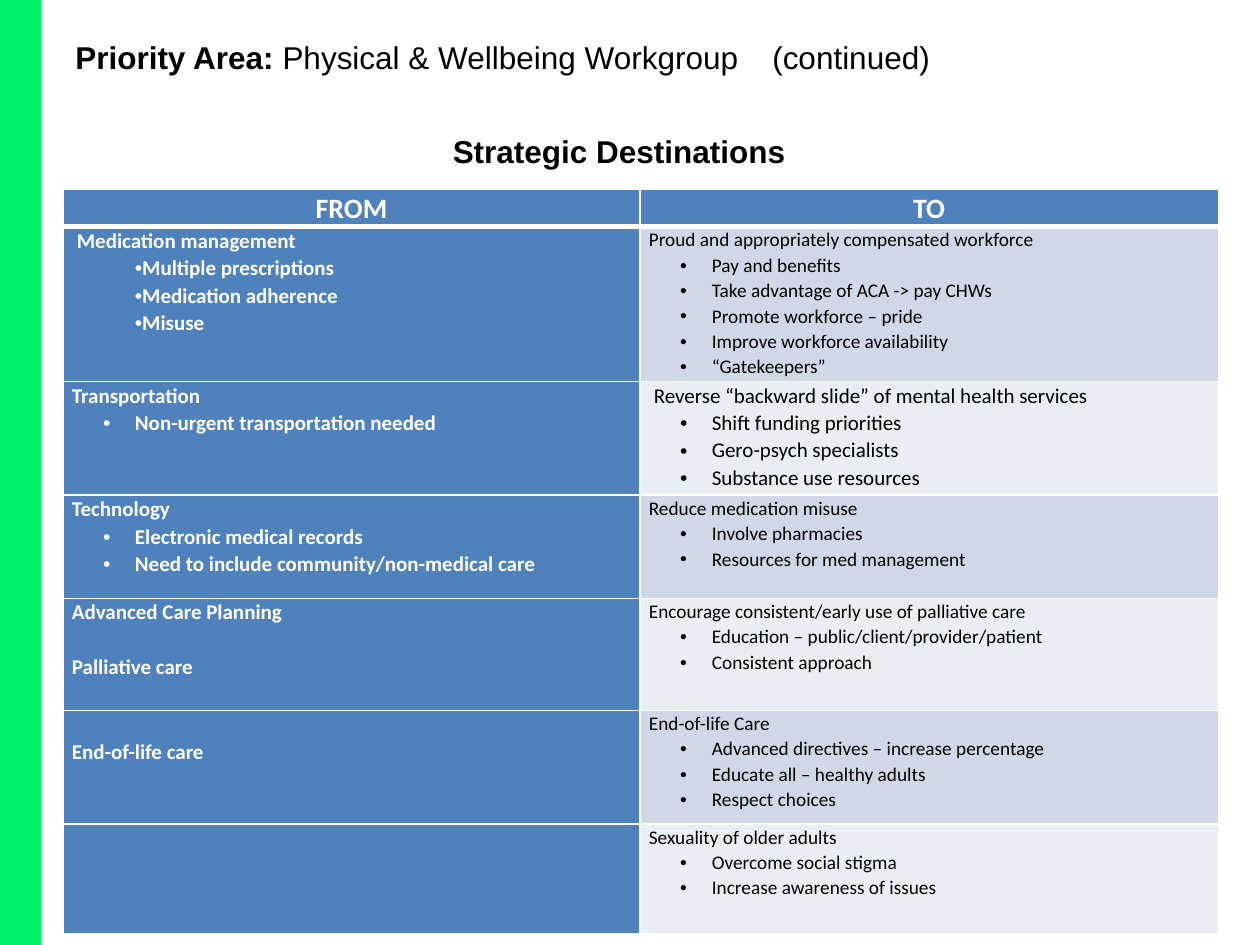
from dataclasses import dataclass

from lxml.etree import SubElement
from pptx import Presentation
from pptx.dml.color import RGBColor
from pptx.enum.shapes import MSO_SHAPE as Shape
from pptx.enum.text import MSO_ANCHOR as Anchor, PP_ALIGN as Align
from pptx.oxml.ns import qn
from pptx.util import Cm, Pt

COLORS = {
    "bar": "00F26D", "blue": "4F81BD", "band_dark": "D0D8E8",
    "band_light": "E9EDF4", "white": "FFFFFF", "black": "000000",
}
COL_WIDTHS = [11.63, 11.66]
ROW_HEIGHTS = [0.76, 3.12, 2.29, 2.08, 2.26, 2.29, 2.21]
BLANK_LINE = Pt(15.7)


@dataclass
class Entry:
    heading: str = ""
    bullets: tuple = ()
    size: int = 11
    hanging: float = 0.64   # bullet outdent, cm
    left: float = 0         # heading indent, cm
    second: str = ""        # another heading, one line further down
    top: int = 0            # cell top margin


ROWS = [
    (Entry("Medication management",
           ("Multiple prescriptions", "Medication adherence", "Misuse"),
           12, hanging=0, left=0.1),
     Entry("Proud and appropriately compensated workforce",
           ("Pay and benefits", "Take advantage of ACA -> pay CHWs",
            "Promote workforce – pride", "Improve workforce availability",
            "“Gatekeepers”"))),
    (Entry("Transportation", ("Non-urgent transportation needed",), 12),
     Entry("Reverse “backward slide” of mental health services",
           ("Shift funding priorities", "Gero-psych specialists",
            "Substance use resources"), 12, left=0.1)),
    (Entry("Technology", ("Electronic medical records",
                          "Need to include community/non-medical care"), 12),
     Entry("Reduce medication misuse",
           ("Involve pharmacies", "Resources for med management"))),
    (Entry("Advanced Care Planning", size=12, second="Palliative care"),
     Entry("Encourage consistent/early use of palliative care",
           ("Education – public/client/provider/patient",
            "Consistent approach"))),
    (Entry("End-of-life care", size=12, top=BLANK_LINE),
     Entry("End-of-life Care",
           ("Advanced directives – increase percentage",
            "Educate all – healthy adults", "Respect choices"))),
    (Entry(),
     Entry("Sexuality of older adults",
           ("Overcome social stigma", "Increase awareness of issues"))),
]


def rgb(name):
    return RGBColor.from_string(COLORS[name])


def style_run(r, font, size, color, bold):
    r.font.name, r.font.size, r.font.bold = font, Pt(size), bold
    r.font.color.rgb = rgb(color)


def add_bar(s):
    sp = s.shapes.add_shape(Shape.RECTANGLE, 0, 0, Cm(0.84), Cm(19.05))
    sp.shadow.inherit = False
    sp.fill.solid()
    sp.fill.fore_color.rgb = rgb("bar")
    sp.line.fill.background()


def add_heading(s, box, parts, align=Align.LEFT, tab=None):
    """Text box of one line, given as (text, bold) parts."""
    tf = s.shapes.add_textbox(*map(Cm, box)).text_frame
    tf.word_wrap = True
    p = tf.paragraphs[0]
    p.alignment = align
    if tab:
        tabs = SubElement(p._p.get_or_add_pPr(), qn("a:tabLst"))
        SubElement(tabs, qn("a:tab"), pos=str(Cm(tab)), algn="l")
    for text, bold in parts:
        r = p.add_run()
        r.text = text
        style_run(r, "Arial", 18, "black", bold)


def format_cell(cell, fill, top_line=1, bottom_line=1, top=0):
    cell.margin_left = cell.margin_right = Cm(0.18)
    cell.margin_top, cell.margin_bottom = top, 0
    tc_pr = cell._tc.get_or_add_tcPr()
    for side, width in zip("LRTB", (1, 1, top_line, bottom_line)):
        ln = SubElement(tc_pr, qn(f"a:ln{side}"), w=str(Pt(width)))
        line_fill = SubElement(ln, qn("a:solidFill"))
        SubElement(line_fill, qn("a:srgbClr"), val=COLORS["white"])
    cell.fill.solid()
    cell.fill.fore_color.rgb = rgb(fill)


def set_line(p, text, size, color, bold, left=0.0, hanging=0.0, bullet=False):
    p.text = text
    p.line_spacing = 1.07
    p_pr = p._p.get_or_add_pPr()
    p_pr.set("marL", str(Cm(left)))
    p_pr.set("indent", str(-Cm(hanging)))
    if bullet:
        SubElement(p_pr, qn("a:buFont"), typeface="Arial")
        SubElement(p_pr, qn("a:buChar"), char="•")
    for r in p.runs:
        style_run(r, "Calibri", size, color, bold)


def fill_entry(cell, entry, color, bold):
    if not entry.heading:
        return
    tf = cell.text_frame
    style = (entry.size, color, bold)
    set_line(tf.paragraphs[0], entry.heading, *style, left=entry.left)
    for text in entry.bullets:
        set_line(tf.add_paragraph(), text, *style, left=1.27,
                 hanging=entry.hanging, bullet=True)
    if entry.second:
        p = tf.add_paragraph()
        set_line(p, entry.second, *style)
        p.space_before = BLANK_LINE


def add_destinations(s):
    table = s.shapes.add_table(
        len(ROW_HEIGHTS), 2, Cm(1.27), Cm(3.81),
        Cm(sum(COL_WIDTHS)), Cm(sum(ROW_HEIGHTS))).table
    for column, width in zip(table.columns, COL_WIDTHS):
        column.width = Cm(width)
    for row, height in zip(table.rows, ROW_HEIGHTS):
        row.height = Cm(height)

    # Header row
    for col, text in enumerate(("FROM", "TO")):
        cell = table.cell(0, col)
        format_cell(cell, "blue", bottom_line=3)
        cell.vertical_anchor = Anchor.MIDDLE
        p = cell.text_frame.paragraphs[0]
        set_line(p, text, 16, "white", True)
        p.alignment = Align.CENTER

    # Body rows: blue first column, banded second column
    for i, (source, target) in enumerate(ROWS, start=1):
        band = "band_dark" if i % 2 else "band_light"
        for col, entry, fill, color in ((0, source, "blue", "white"),
                                        (1, target, band, "black")):
            cell = table.cell(i, col)
            format_cell(cell, fill, top_line=3 if i == 1 else 1, top=entry.top)
            fill_entry(cell, entry, color, bold=col == 0)


def main():
    prs = Presentation()
    prs.slide_width, prs.slide_height = Cm(25.4), Cm(19.05)
    s = prs.slides.add_slide(prs.slide_layouts[6])

    # Title, table, table heading, side bar
    add_heading(s, (1.27, 0.64, 23.7, 2.31),
                [("Priority Area: ", True),
                 ("Physical & Wellbeing Workgroup\t(continued)", False)],
                tab=14.05)
    add_destinations(s)
    add_heading(s, (1.47, 2.54, 22.02, 1.02),
                [("Strategic Destinations", True)], Align.CENTER)
    add_bar(s)
    prs.save("out.pptx")


if __name__ == "__main__":
    main()
